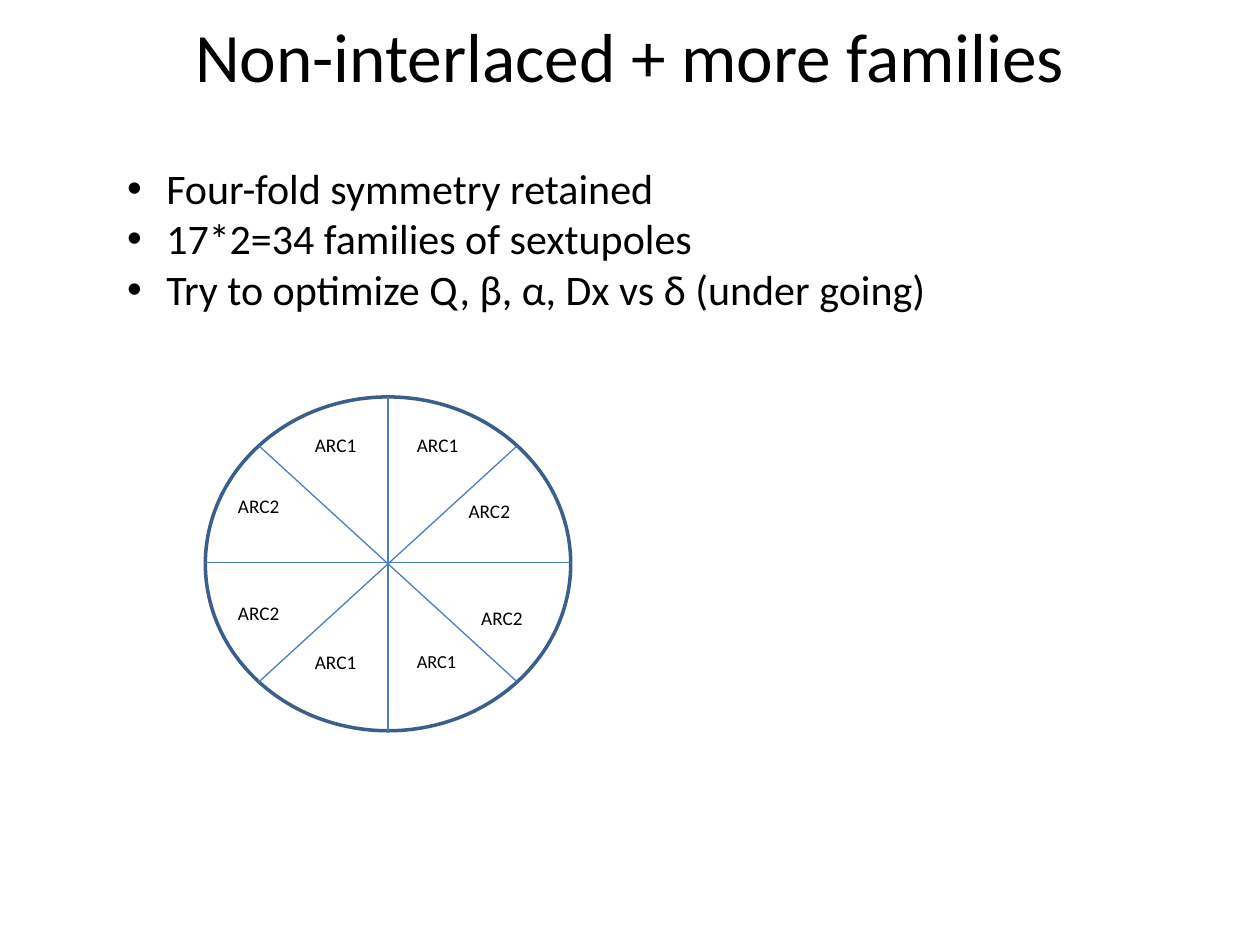
import math

import pptx
import pptx.dml.color
import pptx.enum.shapes
import pptx.enum.text
import pptx.oxml.ns
import pptx.util
from lxml import etree
from pptx.util import Inches

FONT = "Calibri"
BLACK = "000000"
RIM = "3A5F8C"
SPOKE = "4B7EBC"
BULLETS = [
    "Four-fold symmetry retained",
    "17*2=34 families of sextupoles",
    "Try to optimize Q, β, α, Dx vs δ (under going)",
]
SPOKES = [(0, 0.01), (90, 0), (45, 0), (135, 0)]
ARC_LABELS = [
    ("ARC1", 1.58, 1.96, 10.5),
    ("ARC1", 0.77, 1.96, 11),
    ("ARC2", 0.16, 1.57, 11),
    ("ARC2", 0.16, 0.72, 11),
    ("ARC1", 0.77, 0.24, 11),
    ("ARC1", 1.58, 0.24, 11),
    ("ARC2", 1.99, 0.76, 11),
    ("ARC2", 2.09, 1.61, 11),
]


def color(value):
    """Return the colour for a hex string."""
    return pptx.dml.color.RGBColor.from_string(value)


def place(shape, box):
    """Move and size a shape to a box given in inches."""
    shape.left, shape.top, shape.width, shape.height = map(Inches, box)


def style(para, size):
    """Set the font of a paragraph."""
    para.font.name = FONT
    para.font.size = pptx.util.Pt(size)
    para.font.color.rgb = color(BLACK)


def add_title(page, box, text):
    """Fill the title placeholder."""
    title = page.shapes.title
    place(title, box)
    frame = title.text_frame
    frame.text = text
    frame.vertical_anchor = pptx.enum.text.MSO_ANCHOR.MIDDLE
    para = frame.paragraphs[0]
    para.alignment = pptx.enum.text.PP_ALIGN.CENTER
    style(para, 39.6)


def add_bullets(page, box, lines):
    """Fill the body placeholder with a bulleted list."""
    body = page.placeholders[1]
    place(body, box)
    frame = body.text_frame
    frame.text = "\n".join(lines)
    frame.auto_size = pptx.enum.text.MSO_AUTO_SIZE.NONE
    for para in frame.paragraphs:
        style(para, 24)
        para.space_before = pptx.util.Pt(0)
        properties = para._p.get_or_add_pPr()
        properties.set("marL", str(Inches(0.31)))
        properties.set("indent", str(Inches(-0.31)))


def add_spoke(group, box, angle, lift):
    """Draw one diameter of the ellipse that fills the box."""
    left, top, width, height = box
    across = width / 2 * math.cos(math.radians(angle))
    down = height / 2 * math.sin(math.radians(angle))
    middle_x, middle_y = left + width / 2, top + height / 2 - lift
    ends = (middle_x - across, middle_y - down, middle_x + across, middle_y + down)
    spoke = group.shapes.add_connector(
        pptx.enum.shapes.MSO_CONNECTOR.STRAIGHT, *map(Inches, ends)
    )
    spoke.line.color.rgb = color(SPOKE)
    spoke.line.width = pptx.util.Pt(0.75)
    etree.SubElement(spoke._element.spPr, pptx.oxml.ns.qn("a:effectLst"))


def add_ring(page, box):
    """Draw the ring with its spokes and arc labels."""
    group = page.shapes.add_group_shape()
    rim = group.shapes.add_shape(
        pptx.enum.shapes.MSO_SHAPE.OVAL, *map(Inches, box)
    )
    rim.shadow.inherit = False
    rim.fill.background()
    rim.line.color.rgb = color(RIM)
    rim.line.width = pptx.util.Pt(2)
    for angle, lift in SPOKES:
        add_spoke(group, box, angle, lift)
    for text, across, down, size in ARC_LABELS:
        label_box = (box[0] + across, box[1] + down, 0.81, 0.29)
        label = group.shapes.add_textbox(*map(Inches, label_box))
        label.text_frame.word_wrap = True
        label.text_frame.text = text
        style(label.text_frame.paragraphs[0], size)


def main():
    """Build and save the deck."""
    deck = pptx.Presentation()
    deck.slide_width, deck.slide_height = Inches(10), Inches(7.5)
    page = deck.slides.add_slide(deck.slide_layouts[1])
    add_title(page, (0.5, 0.05, 9, 0.77), "Non-interlaced + more families")
    add_ring(page, (1.63, 3.15, 2.9, 2.65))
    add_bullets(page, (0.91, 1.24, 7.8, 1.31), BULLETS)
    deck.save("out.pptx")


if __name__ == "__main__":
    main()
